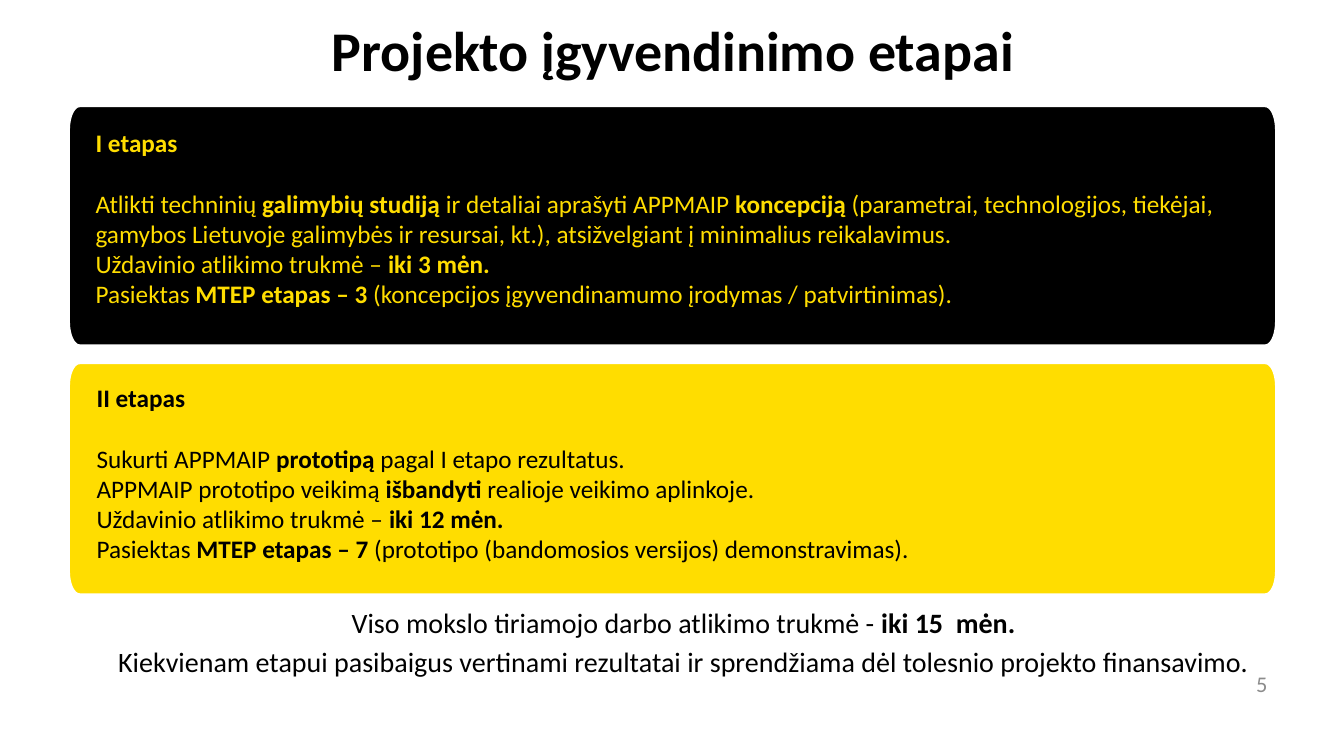
from dataclasses import dataclass
from math import cos, pi, sin

from pptx import Presentation
from pptx.dml.color import RGBColor
from pptx.enum.text import MSO_ANCHOR, PP_ALIGN
from pptx.util import Inches, Pt

LEFT, CENTER, RIGHT = PP_ALIGN.LEFT, PP_ALIGN.CENTER, PP_ALIGN.RIGHT
TOP, MIDDLE = MSO_ANCHOR.TOP, MSO_ANCHOR.MIDDLE


@dataclass(frozen=True)
class Theme:
    font: str = "Calibri"
    black: RGBColor = RGBColor(0x00, 0x00, 0x00)
    yellow: RGBColor = RGBColor(0xFF, 0xDD, 0x00)
    white: RGBColor = RGBColor(0xFF, 0xFF, 0xFF)
    gray: RGBColor = RGBColor(0x8C, 0x8C, 0x8C)
    title_size: int = 40
    stage_size: int = 18
    summary_size: int = 20
    number_size: int = 16


THEME = Theme()

# A paragraph is a list of (text, bold) runs.
TITLE = [[("Projekto įgyvendinimo etapai", True)]]
PAGE_NUMBER = [[("5", False)]]
STAGES = [
    {
        "panel": (0.68, 1.05, 11.98, 2.38),
        "text_area": (0.85, 1.21, 11.86, 2.22),
        "fill": THEME.black,
        "color": THEME.yellow,
        "lines": [
            [("I etapas", True)],
            [("Atlikti techninių ", False), ("galimybių studiją ", True),
             ("ir detaliai aprašyti APPMAIP ", False), ("koncepciją", True),
             (" (parametrai, technologijos, tiekėjai, gamybos Lietuvoje galimybės "
              "ir resursai, kt.), atsižvelgiant į minimalius reikalavimus.", False)],
            [("Uždavinio atlikimo trukmė – ", False), ("iki 3 mėn.", True)],
            [("Pasiektas ", False), ("MTEP etapas – 3", True),
             (" (koncepcijos įgyvendinamumo įrodymas / patvirtinimas).", False)],
        ],
    },
    {
        "panel": (0.68, 3.6, 11.98, 2.3),
        "text_area": (0.86, 3.74, 11.84, 1.92),
        "fill": THEME.yellow,
        "color": THEME.black,
        "lines": [
            [("II etapas", True)],
            [("Sukurti APPMAIP ", False), ("prototipą", True),
             (" pagal I etapo rezultatus.", False)],
            [("APPMAIP prototipo veikimą ", False), ("išbandyti", True),
             (" realioje veikimo aplinkoje.", False)],
            [("Uždavinio atlikimo trukmė – ", False), ("iki 12 mėn.", True)],
            [("Pasiektas ", False), ("MTEP etapas – 7 ", True),
             ("(prototipo (bandomosios versijos) demonstravimas).", False)],
        ],
    },
]
SUMMARY = [
    [("Viso mokslo tiriamojo darbo atlikimo trukmė - ", False), ("iki 15  mėn.", True)],
    [("Kiekvienam etapui pasibaigus vertinami rezultatai ir sprendžiama "
      "dėl tolesnio projekto finansavimo.", False)],
]

TITLE_AREA = (1.01, 0.11, 11.33, 0.75)
SUMMARY_AREA = (0.78, 5.96, 12, 0.86)
NUMBER_AREA = (9.56, 6.58, 3.11, 0.4)
CORNER_WIDTH = 0.11
CORNER_SHARE = 0.1  # corner height as a share of the panel height
CORNER_STEPS = 12


def write(frame, lines, size, color, align=LEFT, anchor=TOP, gaps=None):
    """Fill a text frame; gaps maps a paragraph index to its space before in points."""
    frame.word_wrap = True
    frame.vertical_anchor = anchor
    for index, line in enumerate(lines):
        para = frame.add_paragraph() if index else frame.paragraphs[0]
        para.alignment = align
        para.space_before = Pt((gaps or {}).get(index, 0))
        for text, bold in line:
            span = para.add_run()
            span.text = text
            span.font.name = THEME.font
            span.font.size = Pt(size)
            span.font.bold = bold
            span.font.color.rgb = color


def add_text(page, area, *args, **options):
    box = page.shapes.add_textbox(*map(Inches, area))
    write(box.text_frame, *args, **options)


def add_panel(page, area, fill):
    """Draw a panel whose corners are quarter ellipses."""
    left, top, width, height = area
    radius_x, radius_y = CORNER_WIDTH, CORNER_SHARE * height
    near_x, far_x = left + radius_x, left + width - radius_x
    near_y, far_y = top + radius_y, top + height - radius_y
    centers = [(far_x, far_y), (near_x, far_y), (near_x, near_y), (far_x, near_y)]
    points = []
    for quarter, (x, y) in enumerate(centers):
        for step in range(CORNER_STEPS + 1):
            angle = (quarter + step / CORNER_STEPS) * pi / 2
            points.append((Inches(x + radius_x * cos(angle)),
                           Inches(y + radius_y * sin(angle))))
    builder = page.shapes.build_freeform(*points[0])
    builder.add_line_segments(points[1:], close=True)
    panel = builder.convert_to_shape()
    panel.shadow.inherit = False
    panel.fill.solid()
    panel.fill.fore_color.rgb = fill
    panel.line.color.rgb = THEME.white
    panel.line.width = Pt(2)


def main():
    deck = Presentation()
    deck.slide_width, deck.slide_height = Inches(13.33), Inches(7.5)
    page = deck.slides.add_slide(deck.slide_layouts[5])

    title = page.shapes.title
    title.left, title.top, title.width, title.height = map(Inches, TITLE_AREA)
    write(title.text_frame, TITLE, THEME.title_size, THEME.black, CENTER, MIDDLE)

    add_text(page, NUMBER_AREA, PAGE_NUMBER, THEME.number_size, THEME.gray, RIGHT, MIDDLE)
    for stage in STAGES:
        add_panel(page, stage["panel"], stage["fill"])
        add_text(page, stage["text_area"], stage["lines"], THEME.stage_size,
                 stage["color"], gaps={1: 22})
    add_text(page, SUMMARY_AREA, SUMMARY, THEME.summary_size, THEME.black, CENTER,
             gaps={1: 4})

    deck.save("out.pptx")


if __name__ == "__main__":
    main()
